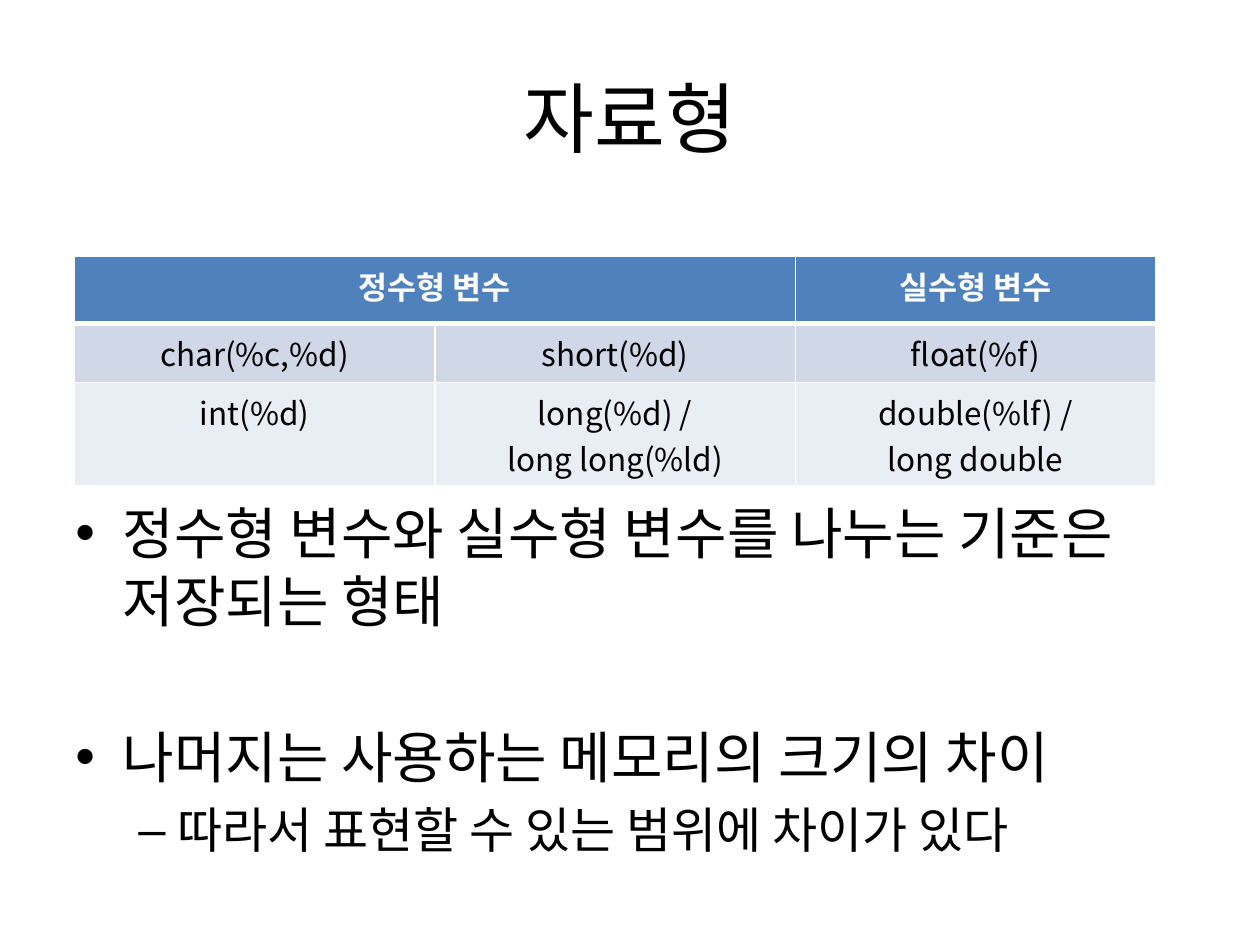
from lxml import etree
from pptx import Presentation
from pptx.dml.color import RGBColor
from pptx.enum import text as t
from pptx.oxml import ns
from pptx.util import Pt

FONT = "Noto Sans CJK KR"
HUE = {"ink": "000000", "white": "FFFFFF", "head": "4F81BD",
       "odd": "D0D8E8", "even": "E9EDF4"}
ROWS = [["정수형 변수", "", "실수형 변수"],
        ["char(%c,%d)", "short(%d)", "float(%f)"],
        ["int(%d)", "long(%d) /\nlong long(%ld)", "double(%lf) /\nlong double"]]
POINTS = [("정수형 변수와 실수형 변수를 나누는 기준은 저장되는 형태", 0, 6.4),
          ("나머지는 사용하는 메모리의 크기의 차이", 0, 51.2),
          ("따라서 표현할 수 있는 범위에 차이가 있다", 1, 5.6)]
LEVELS = [{"size": 32, "mark": "•", "left": 27, "hang": 27},
          {"size": 28, "mark": "–", "left": 58.5, "hang": 22.5}]


def write(para, words, size=18, hue="ink", bold=False, center=False):
    """Put formatted words into a paragraph."""
    run = para.add_run()
    run.text = words
    font = run.font
    font.name, font.size, font.bold = FONT, Pt(size), bold
    font.color.rgb = RGBColor.from_string(HUE[hue])
    para.alignment = t.PP_ALIGN.CENTER if center else t.PP_ALIGN.LEFT


def frame(slide, box):
    """Add a wrapping text box and return its text frame."""
    body = slide.shapes.add_textbox(*map(Pt, box)).text_frame
    body.word_wrap = True
    return body


def bullet(para, mark, left, hang):
    """Give a paragraph a hanging bullet."""
    props = para._p.get_or_add_pPr()
    props.set("marL", str(Pt(left)))
    props.set("indent", str(-Pt(hang)))
    etree.SubElement(props, ns.qn("a:buFont"), typeface="Arial")
    etree.SubElement(props, ns.qn("a:buChar"), char=mark)


def edge(cell, side, width):
    """Draw one white border of a cell."""
    props = cell._tc.get_or_add_tcPr()
    line = etree.SubElement(props, ns.qn("a:" + side), w=str(Pt(width)))
    fill = etree.SubElement(line, ns.qn("a:solidFill"))
    etree.SubElement(fill, ns.qn("a:srgbClr"), val=HUE["white"])


def title(slide, box):
    """Place the centred heading."""
    body = frame(slide, box)
    body.vertical_anchor = t.MSO_ANCHOR.MIDDLE
    write(body.paragraphs[0], "자료형", size=44, center=True)


def grid(slide, box):
    """Place the table of data types."""
    table = slide.shapes.add_table(3, 3, *map(Pt, box)).table
    for col in table.columns:
        col.width = Pt(box[2] / 3)
    for row, high in zip(table.rows, (38.3, 33.7, box[3] - 72)):
        row.height = Pt(high)
    table.cell(0, 0).merge(table.cell(0, 1))
    for r, row in enumerate(ROWS):
        for c, words in enumerate(row):
            cell = table.cell(r, c)
            for side in ("lnL", "lnR", "lnT", "lnB"):
                thick = (r, side) in ((0, "lnB"), (1, "lnT"))
                edge(cell, side, 3 if thick else 1)
            cell.fill.solid()
            shade = ("head", "odd", "even")[r]
            cell.fill.fore_color.rgb = RGBColor.from_string(HUE[shade])
            if cell.is_spanned:
                continue
            body = cell.text_frame
            for i, line in enumerate(words.split("\n")):
                para = body.add_paragraph() if i else body.paragraphs[0]
                write(para, line, hue="ink" if r else "white",
                      bold=r == 0, center=True)


def notes(slide, box):
    """Place the bulleted remarks."""
    body = frame(slide, box)
    for i, (words, level, gap) in enumerate(POINTS):
        para = body.add_paragraph() if i else body.paragraphs[0]
        look = LEVELS[level]
        para.level = level
        para.space_before = Pt(gap)
        write(para, words, size=look["size"])
        bullet(para, look["mark"], look["left"], look["hang"])


def main():
    """Build and save the slide."""
    deck = Presentation()
    deck.slide_width, deck.slide_height = Pt(720), Pt(540)
    slide = deck.slides.add_slide(deck.slide_layouts[6])
    title(slide, (36, 21.6, 648, 90))
    grid(slide, (42.5, 146.7, 618, 131))
    notes(slide, (36, 281.5, 648, 211.7))
    deck.save("out.pptx")


if __name__ == "__main__":
    main()
